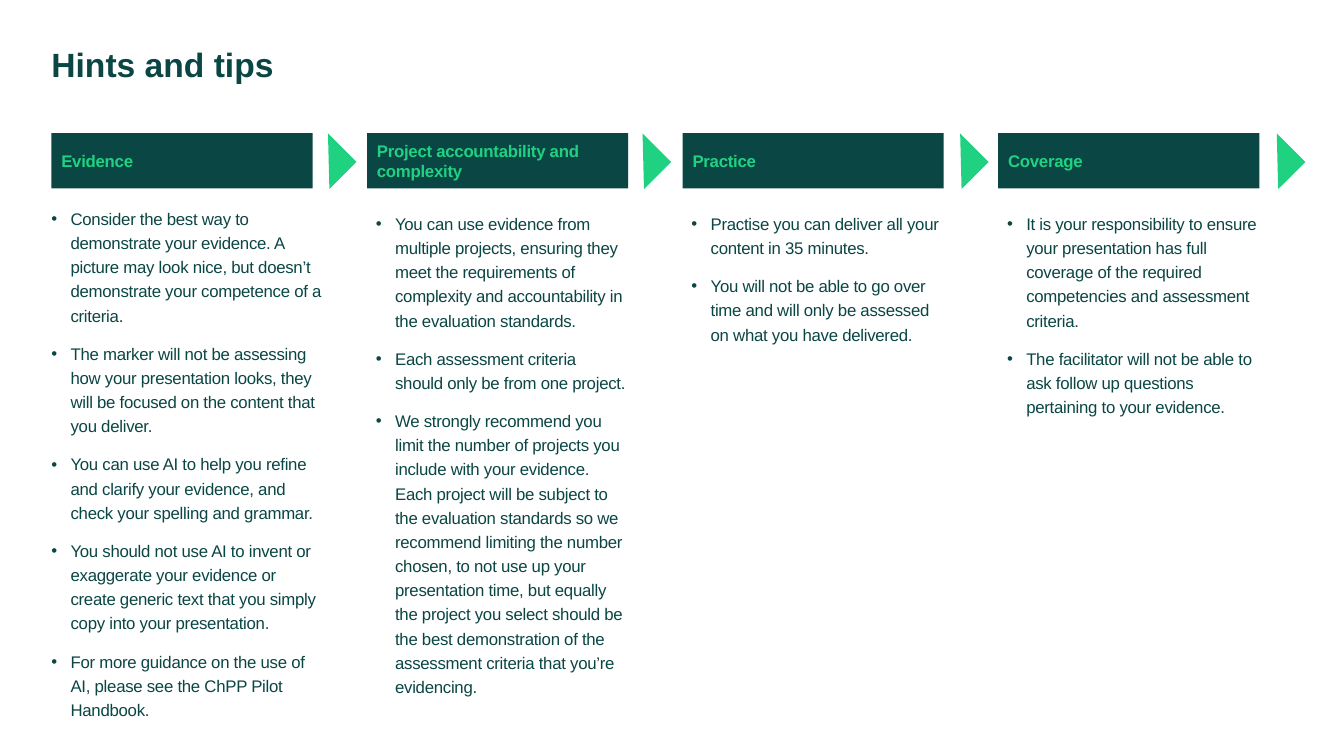
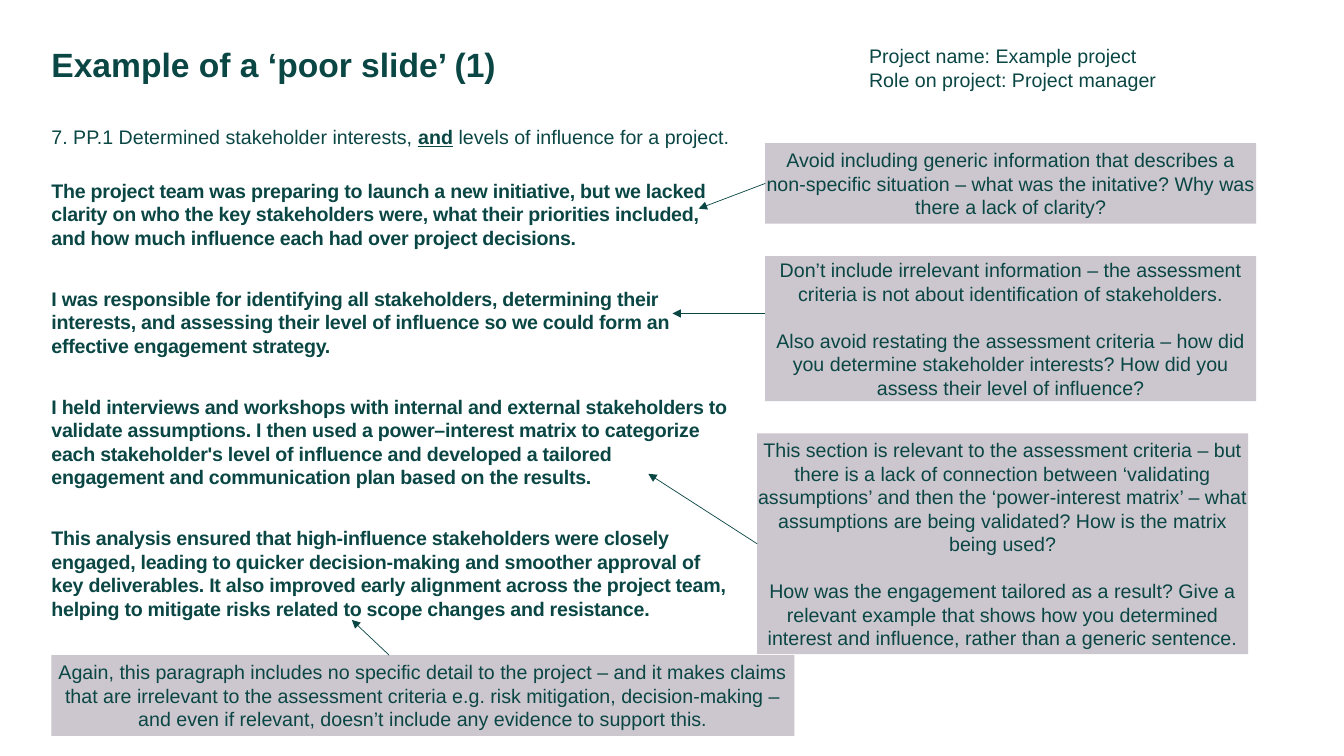
from lxml.etree import SubElement
from pptx import Presentation
from pptx.dml.color import RGBColor
from pptx.enum.shapes import MSO_CONNECTOR, MSO_SHAPE
from pptx.enum.text import MSO_ANCHOR, MSO_AUTO_SIZE, PP_ALIGN
from pptx.oxml.ns import qn
from pptx.util import Inches, Pt

COLORS = {"dark": "0A4644", "bright": "21D182", "note": "CCC6CE"}
FONT = "Arial"
MARGIN = 0.51


def add_span(para, text, size, color="dark", bold=False, tracking=0):
    span = para.add_run()
    span.text = text
    span.font.name = FONT
    span.font.size = Pt(size)
    span.font.bold = bold
    span.font.color.rgb = RGBColor.from_string(COLORS[color])
    if tracking:
        span.font._element.set("spc", str(int(tracking * 100)))
    return span


def write(box, texts, size, inset=True, anchor=MSO_ANCHOR.TOP, align=PP_ALIGN.LEFT,
          line=1.0, after=0, bullet=False, **style):
    frame = box.text_frame
    frame.word_wrap = True
    frame.auto_size = MSO_AUTO_SIZE.NONE
    frame.vertical_anchor = anchor
    frame.margin_left = frame.margin_right = Inches(0.1 if inset else 0)
    frame.margin_top = frame.margin_bottom = Inches(0.05 if inset else 0)
    for index, text in enumerate(texts):
        para = frame.add_paragraph() if index else frame.paragraphs[0]
        props = para._p.get_or_add_pPr()
        indent = Inches(0.19) if bullet else 0
        props.set("marL", str(indent))
        props.set("indent", str(-indent))
        if bullet:
            SubElement(props, qn("a:buFont")).set("typeface", FONT)
            SubElement(props, qn("a:buChar")).set("char", "•")
        else:
            SubElement(props, qn("a:buNone"))
        para.alignment = align
        para.line_spacing = line
        para.space_before = Pt(0)
        para.space_after = Pt(after)
        add_span(para, text, size, **style)


deck = Presentation()
deck.slide_width = Inches(13.33)
deck.slide_height = Inches(7.5)

# Pages with their titles: layout number, title, title width
pages = []
for layout, title, width in [
    (1, "Hints and tips", 12.31),
    (3, "Example of a ‘poor slide’ (1)", 7.91),
]:
    page = deck.slides.add_slide(deck.slide_layouts[layout])
    box = page.shapes.title
    box.left, box.top, box.width, box.height = map(Inches, (MARGIN, 0.51, width, 0.39))
    write(box, [title], 24, inset=False, line=0.8, bold=True)
    pages.append(page)
tips_page, example_page = pages

# Hints and tips: four columns, each with a heading and a list
columns = [
    ("Evidence", [
        "Consider the best way to demonstrate your evidence. A picture may look nice, "
        "but doesn’t demonstrate your competence of a criteria.",
        "The marker will not be assessing how your presentation looks, they will be "
        "focused on the content that you deliver.",
        "You can use AI to help you refine and clarify your evidence, and check your "
        "spelling and grammar.",
        "You should not use AI to invent or exaggerate your evidence or create generic "
        "text that you simply copy into your presentation.",
        "For more guidance on the use of AI, please see the ChPP Pilot Handbook.",
    ]),
    ("Project accountability and complexity", [
        "You can use evidence from multiple projects, ensuring they meet the requirements "
        "of complexity and accountability in the evaluation standards.",
        "Each assessment criteria should only be from one project.",
        "We strongly recommend you limit the number of projects you include with your "
        "evidence. Each project will be subject to the evaluation standards so we "
        "recommend limiting the number chosen, to not use up your presentation time, but "
        "equally the project you select should be the best demonstration of the "
        "assessment criteria that you’re evidencing.",
    ]),
    ("Practice", [
        "Practise you can deliver all your content in 35 minutes.",
        "You will not be able to go over time and will only be assessed on what you have "
        "delivered.",
    ]),
    ("Coverage", [
        "It is your responsibility to ensure your presentation has full coverage of the "
        "required competencies and assessment criteria.",
        "The facilitator will not be able to ask follow up questions pertaining to your "
        "evidence.",
    ]),
]
for index, (heading, tips) in enumerate(columns):
    left = MARGIN + 3.13 * index
    band = tips_page.shapes.add_shape(
        MSO_SHAPE.RECTANGLE, Inches(left), Inches(1.32), Inches(2.59), Inches(0.55))
    band.shadow.inherit = False
    band.fill.solid()
    band.fill.fore_color.rgb = RGBColor.from_string(COLORS["dark"])
    band.line.fill.background()
    write(band, [heading], 12, anchor=MSO_ANCHOR.MIDDLE, after=5,
          color="bright", bold=True, tracking=-0.2)

    if index == 0:
        box = tips_page.placeholders[1]
        box.left, box.top, box.width, box.height = map(Inches, (left, 2.03, 2.68, 4.99))
    else:
        box = tips_page.shapes.add_textbox(
            Inches(left - 0.01), Inches(2.03), Inches(2.68), Inches(3.72))
    write(box, tips, 12, inset=index > 0, line=1.2, after=10, bullet=True, tracking=-0.2)

# Pointers after each heading
for left in (3.06, 6.18, 9.33, 12.47):
    pointer = tips_page.shapes.add_shape(
        MSO_SHAPE.RIGHT_TRIANGLE, Inches(left), Inches(1.41), Inches(0.4), Inches(0.38))
    pointer.rotation = 225
    pointer.shadow.inherit = False
    pointer.fill.solid()
    pointer.fill.fore_color.rgb = RGBColor.from_string(COLORS["bright"])
    pointer.line.fill.background()

# Example slide: sample answer
answer = example_page.placeholders[1]
answer.left, answer.top, answer.width, answer.height = map(Inches, (MARGIN, 1.77, 6.7, 4.72))
write(answer, [
    "The project team was preparing to launch a new initiative, but we lacked clarity on "
    "who the key stakeholders were, what their priorities included, and how much influence "
    "each had over project decisions.",
    "I was responsible for identifying all stakeholders, determining their interests, and "
    "assessing their level of influence so we could form an effective engagement strategy.",
    "I held interviews and workshops with internal and external stakeholders to validate "
    "assumptions. I then used a power–interest matrix to categorize each stakeholder's "
    "level of influence and developed a tailored engagement and communication plan based "
    "on the results.",
    "This analysis ensured that high-influence stakeholders were closely engaged, leading "
    "to quicker decision-making and smoother approval of key deliverables. It also improved "
    "early alignment across the project team, helping to mitigate risks related to scope "
    "changes and resistance.",
], 14, inset=False, after=26.8, bold=True, tracking=-0.2)

# Criterion
criterion = example_page.placeholders[2]
criterion.left, criterion.top, criterion.width, criterion.height = map(
    Inches, (MARGIN, 1.24, 9.85, 0.39))
write(criterion, ["7. PP.1 Determined stakeholder interests, "], 14, inset=False, after=5)
para = criterion.text_frame.paragraphs[0]
add_span(para, "and", 14, bold=True).font.underline = True
add_span(para, " levels of influence for a project.", 14)

# Project details
details = example_page.shapes.add_textbox(
    Inches(8.62), Inches(0.44), Inches(4.2), Inches(1.19))
write(details, ["Project name: Example project", "Role on project: Project manager"],
      14, inset=False)

# Comments: place, arrow start, arrow end, joined side, paragraphs
comments = [
    ((7.59, 1.42, 4.87, 0.8), (7.59, 1.82), (6.93, 2.07), 1, [
        "Avoid including generic information that describes a non-specific situation – what "
        "was the initative? Why was there a lack of clarity?",
    ]),
    ((7.59, 2.54, 4.87, 1.44), (7.59, 3.11), (6.67, 3.11), None, [
        "Don’t include irrelevant information – the assessment criteria is not about "
        "identification of stakeholders.",
        "Also avoid restating the assessment criteria – how did you determine stakeholder "
        "interests? How did you assess their level of influence?",
    ]),
    ((7.51, 4.3, 4.87, 2.19), (7.51, 5.4), (6.43, 4.7), 1, [
        "This section is relevant to the assessment criteria – but there is a lack of "
        "connection between ‘validating assumptions’ and then the ‘power-interest matrix’ – "
        "what assumptions are being validated? How is the matrix being used?",
        "How was the engagement tailored as a result? Give a relevant example that shows how "
        "you determined interest and influence, rather than a generic sentence.",
    ]),
    ((MARGIN, 6.5, 7.37, 0.8), (3.86, 6.5), (3.49, 6.15), None, [
        "Again, this paragraph includes no specific detail to the project – and it makes "
        "claims that are irrelevant to the assessment criteria e.g. risk mitigation, "
        "decision-making – and even if relevant, doesn’t include any evidence to support "
        "this.",
    ]),
]
for place, start, end, side, texts in comments:
    note = example_page.shapes.add_shape(MSO_SHAPE.RECTANGLE, *map(Inches, place))
    note.shadow.inherit = False
    note.fill.solid()
    note.fill.fore_color.rgb = RGBColor.from_string(COLORS["note"])
    note.line.fill.background()
    write(note, texts, 14, inset=False, anchor=MSO_ANCHOR.MIDDLE, align=PP_ALIGN.CENTER,
          after=16.8)
    note.text_frame.paragraphs[-1].space_after = Pt(0)

    arrow = example_page.shapes.add_connector(
        MSO_CONNECTOR.STRAIGHT, *map(Inches, start + end))
    if side is not None:
        arrow.begin_connect(note, side)
    arrow.line.color.rgb = RGBColor.from_string(COLORS["dark"])
    arrow.line.width = Pt(0.5)
    SubElement(arrow.line._get_or_add_ln(), qn("a:tailEnd")).set("type", "triangle")
    SubElement(arrow._element.spPr, qn("a:effectLst"))

deck.save("out.pptx")
